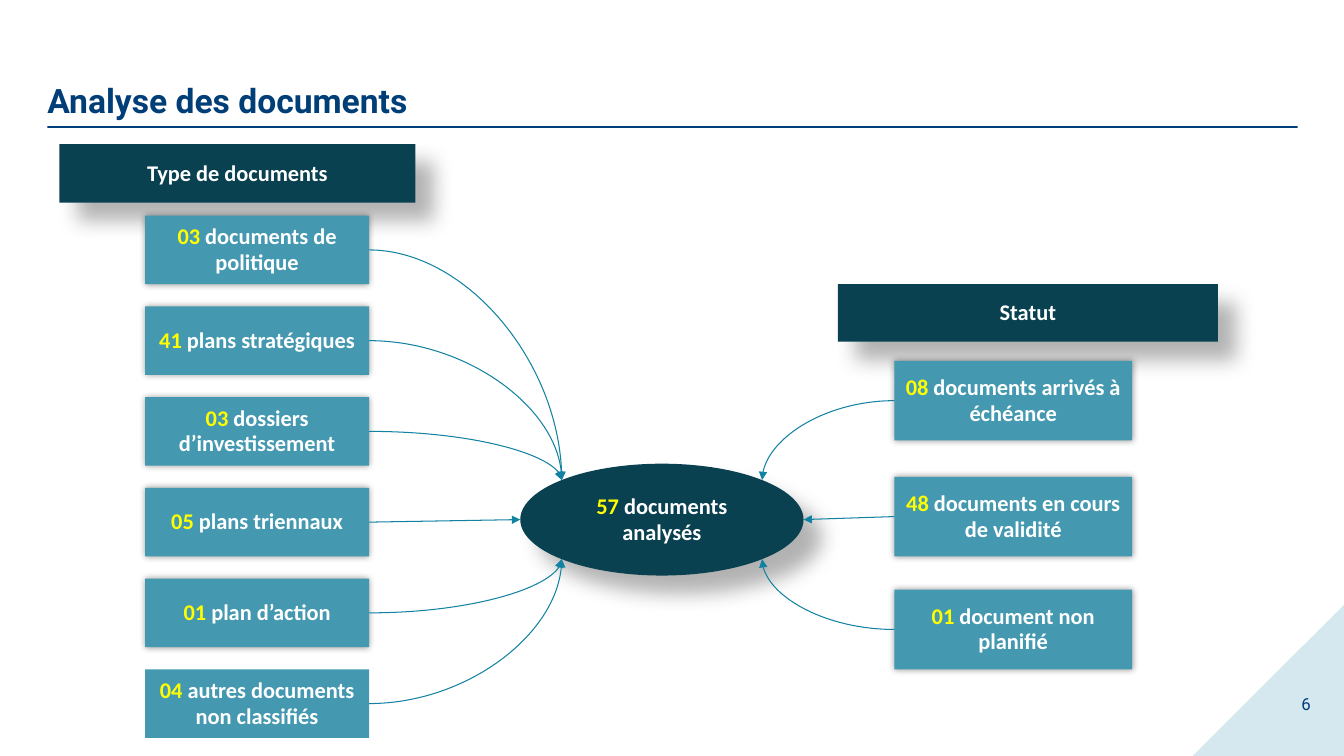
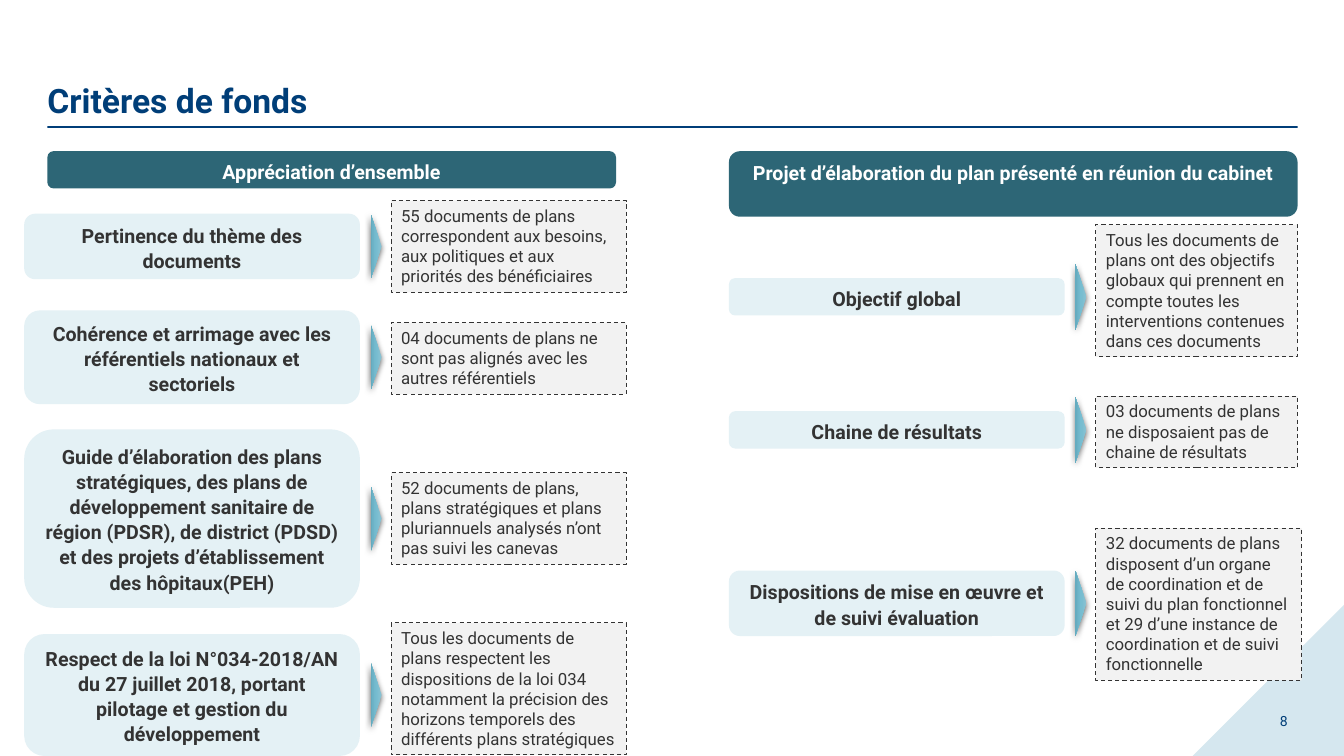
from copy import deepcopy
from dataclasses import dataclass
from math import sqrt

from lxml import etree
from pptx import Presentation
from pptx.dml.color import RGBColor
from pptx.enum.dml import MSO_LINE
from pptx.enum.shapes import MSO_CONNECTOR, MSO_SHAPE
from pptx.enum.text import MSO_ANCHOR, MSO_AUTO_SIZE, PP_ALIGN
from pptx.oxml.ns import qn
from pptx.util import Inches, Pt

RECT = MSO_SHAPE.RECTANGLE
ROUNDED = MSO_SHAPE.ROUNDED_RECTANGLE
OVAL = MSO_SHAPE.OVAL
TRIANGLE = MSO_SHAPE.ISOSCELES_TRIANGLE
CORNER = MSO_SHAPE.RIGHT_TRIANGLE
DASH = MSO_LINE.DASH
STRAIGHT, CURVE = MSO_CONNECTOR.STRAIGHT, MSO_CONNECTOR.CURVE
TOP, MIDDLE, BOTTOM = MSO_ANCHOR.TOP, MSO_ANCHOR.MIDDLE, MSO_ANCHOR.BOTTOM
LEFT, CENTER, RIGHT = PP_ALIGN.LEFT, PP_ALIGN.CENTER, PP_ALIGN.RIGHT
GROW = MSO_AUTO_SIZE.SHAPE_TO_FIT_TEXT
LEFT_SIDE, RIGHT_SIDE = 1, 3


@dataclass(frozen=True)
class Theme:
    navy: str = "003E78"
    corner: str = "D5E7EF"
    deep: str = "094151"
    card: str = "4499B1"
    arrow: str = "1282A2"
    number: str = "FFFF00"
    white: str = "FFFFFF"
    header: str = "2D6676"
    criterion: str = "E4F1F5"
    finding: str = "F2F2F2"
    ink: str = "333333"
    pointer: tuple = ((0, "8AC2D2"), (0.5, "76BCD0"), (1, "64AABE"))
    # shadows: opacity %, blur pt, distance pt, direction in degrees
    cast: tuple = (30, 15, 18, 45)
    glow: tuple = (40, 5, 0, 0)
    under: tuple = (63, 4.5, 1.5, 90)
    body_font: str = "Roboto"
    diagram_font: str = "Calibri"
    title_size: int = 24
    diagram_size: int = 16
    label_size: int = 14
    finding_size: int = 12


THEME = Theme()

DOCUMENT_TYPES = [
    ("03", "documents de politique"),
    ("41", "plans stratégiques"),
    ("03", "dossiers d’investissement"),
    ("05", "plans triennaux"),
    ("01", "plan d’action"),
    ("04", "autres documents non classifiés"),
]
STATUSES = [
    ("08", "documents arrivés à échéance"),
    ("48", "documents en cours de validité"),
    ("01", "document non planifié"),
]

# criterion top, criterion lines, criterion, finding top, finding lines, finding width, finding
OVERALL_ROWS = [
    (2.12, 2, "Pertinence du thème des documents", 1.99, 4, 2.33,
     "55 documents de plans correspondent aux besoins, aux politiques et aux "
     "priorités des bénéficiaires"),
    (3.08, 3, "Cohérence et arrimage avec les référentiels nationaux et sectoriels",
     3.2, 3, 2.33,
     "04 documents de plans ne sont pas alignés avec les autres référentiels"),
    (4.26, 6, "Guide d’élaboration des plans stratégiques, des plans de développement "
     "sanitaire de région (PDSR), de district (PDSD) et des projets d’établissement "
     "des hôpitaux(PEH)", 4.69, 4, 2.33,
     "52 documents de plans, plans stratégiques et plans pluriannuels analysés "
     "n’ont pas suivi les canevas"),
    (6.29, 4, "Respect de la loi N°034-2018/AN du 27 juillet 2018, portant pilotage "
     "et gestion du développement", 6.18, 6, 2.33,
     "Tous les documents de plans respectent les dispositions de la loi 034 notamment "
     "la précision des horizons temporels des différents plans stratégiques"),
]
PROJECT_ROWS = [
    (2.76, 1, "Objectif global", 2.23, 6, 2,
     "Tous les documents de plans ont des objectifs globaux qui prennent en compte "
     "toutes les interventions contenues dans ces documents"),
    (4.08, 1, "Chaine de résultats", 3.93, 3, 2,
     "03 documents de plans ne disposaient pas de chaine de résultats"),
    (5.66, 2, "Dispositions de mise en œuvre et de suivi évaluation", 5.24, 7, 2.04,
     "32 documents de plans disposent d’un organe de coordination et de suivi du plan "
     "fonctionnel et 29 d’une instance de coordination et de suivi fonctionnelle"),
]


def rgb(value):
    return RGBColor.from_string(value)


def add_box(slide, kind, box, fill=None, shadow=None):
    """Add a shape without outline; box is left, top, width, height in inches."""
    shape = slide.shapes.add_shape(kind, *map(Inches, box))
    if fill:
        shape.fill.solid()
        shape.fill.fore_color.rgb = rgb(fill)
    shape.line.fill.background()
    shape.shadow.inherit = False
    if shadow:
        opacity, blur, distance, direction = shadow
        effects = shape._element.spPr.find(qn("a:effectLst"))
        outer = etree.SubElement(
            effects, qn("a:outerShdw"), blurRad=str(Pt(blur)), dist=str(Pt(distance)),
            dir=str(direction * 60000), algn="ctr", rotWithShape="0")
        color = etree.SubElement(outer, qn("a:srgbClr"), val="000000")
        etree.SubElement(color, qn("a:alpha"), val=str(opacity * 1000))
    return shape


def write(shape, runs, size, font, color=None, bold=False, align=LEFT, anchor=TOP,
          spacing=None, inset=None):
    """Fill a shape with one paragraph; runs are (text, colour) pairs, or one text."""
    frame = shape.text_frame
    frame.word_wrap = True
    frame.vertical_anchor = anchor
    if inset is not None:
        frame.margin_left = frame.margin_right = Inches(inset)
        frame.margin_top = frame.margin_bottom = Inches(inset)
    paragraph = frame.paragraphs[0]
    paragraph.alignment = align
    if spacing:
        paragraph.line_spacing = spacing
    paragraph.font.name, paragraph.font.size = font, Pt(size)
    paragraph.font.bold = bold
    if color:
        paragraph.font.color.rgb = rgb(color)
        runs = [(runs, None)]
    for text, run_color in runs:
        run = paragraph.add_run()
        run.text = text
        if run_color:
            run.font.color.rgb = rgb(run_color)


def add_page(deck, title, number, number_box, number_size):
    """Add a slide with the corner, title, rule and page number."""
    slide = deck.slides.add_slide(deck.slide_layouts[6])
    add_box(slide, CORNER, (11.83, 6, 1.5, 1.5), THEME.corner).rotation = 270
    add_box(slide, RECT, (0.47, 1.25, 12.4, 0.02), THEME.navy)
    heading = slide.shapes.add_textbox(*map(Inches, (0.47, 0.19, 12.4, 1)))
    write(heading, title, THEME.title_size, THEME.body_font, THEME.navy, bold=True,
          anchor=BOTTOM, inset=0)
    folio = slide.shapes.add_textbox(*map(Inches, number_box))
    write(folio, number, number_size, THEME.body_font, THEME.navy, align=RIGHT,
          anchor=MIDDLE)
    return slide


def add_node(slide, kind, box, fill, shadow, label, number=None):
    node = add_box(slide, kind, box, fill, shadow)
    runs = [(label, THEME.white)]
    if number:
        runs = [(number + " ", THEME.number)] + runs
    write(node, runs, THEME.diagram_size, THEME.diagram_font, bold=True, align=CENTER,
          anchor=MIDDLE, spacing=0.95, inset=0.02)
    return node


def add_arrow(slide, card, side, hub):
    """Lead from one side of a card to the hub: straight if level, else curved."""
    start_x = card.left + (card.width if side == RIGHT_SIDE else 0)
    start_y = card.top + card.height // 2
    hub_x, hub_y = hub.left + hub.width // 2, hub.top + hub.height // 2
    toward = -1 if side == RIGHT_SIDE else 1
    level = abs(start_y - hub_y) < Inches(0.1)
    if level:
        end = hub_x + toward * hub.width // 2, hub_y
    else:
        below = 1 if start_y > hub_y else -1
        end = (int(hub_x + toward * hub.width / sqrt(8)),
               int(hub_y + below * hub.height / sqrt(8)))
    arrow = slide.shapes.add_connector(STRAIGHT if level else CURVE,
                                       start_x, start_y, *end)
    arrow.line.color.rgb = rgb(THEME.arrow)
    arrow.line.width = Pt(0.75)
    properties = arrow._element.spPr
    if level:
        arrow.begin_connect(card, side)
    else:
        properties.find(qn("a:prstGeom")).set("prst", "curvedConnector2")
    etree.SubElement(properties.find(qn("a:ln")), qn("a:tailEnd"), type="triangle")
    etree.SubElement(properties, qn("a:effectLst"))


def add_branch(slide, hub, header_box, header, cards, left, tops, size, side):
    """Draw a header, its column of numbered cards and their arrows to the hub."""
    add_node(slide, RECT, header_box, THEME.deep, THEME.cast, header)
    for (number, label), top in zip(cards, tops):
        glow = THEME.glow if top + size[1] < 7 else None
        card = add_node(slide, RECT, (left, top, *size), THEME.card, glow, label, number)
        add_arrow(slide, card, side, hub)


def build_documents_slide(deck):
    slide = add_page(deck, "Analyse des documents", "6", (10.2, 6.78, 2.9, 0.4), 12)
    hub = add_node(slide, OVAL, (5.16, 4.6, 2.81, 1.11), THEME.deep, THEME.cast,
                   "documents analysés", "57")
    type_tops = [2.14 + 0.9 * row for row in range(len(DOCUMENT_TYPES))]
    add_branch(slide, hub, (0.59, 1.43, 3.53, 0.58), "Type de documents",
               DOCUMENT_TYPES, 1.44, type_tops, (2.22, 0.68), RIGHT_SIDE)
    add_branch(slide, hub, (8.31, 2.82, 3.77, 0.57), "Statut",
               STATUSES, 8.87, (3.58, 4.73, 5.85), (2.36, 0.79), LEFT_SIDE)


def add_label(slide, box, text, fill, color):
    label = add_box(slide, ROUNDED, box, fill)
    write(label, text, THEME.label_size, THEME.body_font, color, bold=True,
          align=CENTER, spacing=1.07)
    label.text_frame.auto_size = GROW


def add_pointer(slide, center_x, center_y):
    """Draw a slim shaded triangle that points right."""
    length, depth = 0.65, 0.11
    pointer = add_box(slide, TRIANGLE, (center_x - length / 2, center_y - depth / 2,
                                        length, depth), shadow=THEME.under)
    pointer.rotation = 90
    pointer.fill.gradient()
    pointer.fill.gradient_angle = 270
    stops = pointer._element.spPr.find(".//" + qn("a:gsLst"))
    stops.insert(1, deepcopy(stops[0]))
    for stop, (position, color) in zip(pointer.fill.gradient_stops, THEME.pointer):
        stop.position = position
        stop.color.rgb = rgb(color)


def add_finding(slide, box, text):
    finding = add_box(slide, RECT, box, THEME.finding)
    finding.line.color.rgb = rgb(THEME.ink)
    finding.line.width = Pt(0.75)
    finding.line.dash_style = DASH
    write(finding, text, THEME.finding_size, THEME.body_font, THEME.ink)
    finding.text_frame.auto_size = GROW


def add_criteria(slide, left, rows):
    """Draw rows of criterion, pointer and finding, with heights from line counts."""
    for top, lines, criterion, finding_top, finding_lines, width, finding in rows:
        height = 0.09 + 0.28 * lines
        add_label(slide, (left, top, 3.33, height), criterion, THEME.criterion, THEME.ink)
        add_pointer(slide, left + 3.49, top + height / 2)
        add_finding(slide, (left + 3.64, finding_top, width, 0.11 + 0.2 * finding_lines),
                    finding)


def build_criteria_slide(deck):
    slide = add_page(deck, "Critères de fonds", "8", (9.87, 6.95, 3, 0.4), 10)
    add_label(slide, (0.47, 1.5, 5.64, 0.37), "Appréciation d’ensemble",
              THEME.header, THEME.white)
    add_label(slide, (7.23, 1.5, 5.64, 0.65),
              "Projet d’élaboration du plan présenté en réunion du cabinet",
              THEME.header, THEME.white)
    add_criteria(slide, 0.24, OVERALL_ROWS)
    add_criteria(slide, 7.23, PROJECT_ROWS)


def main():
    deck = Presentation()
    deck.slide_width, deck.slide_height = Inches(13.33), Inches(7.5)
    build_documents_slide(deck)
    build_criteria_slide(deck)
    deck.save("out.pptx")


if __name__ == "__main__":
    main()
